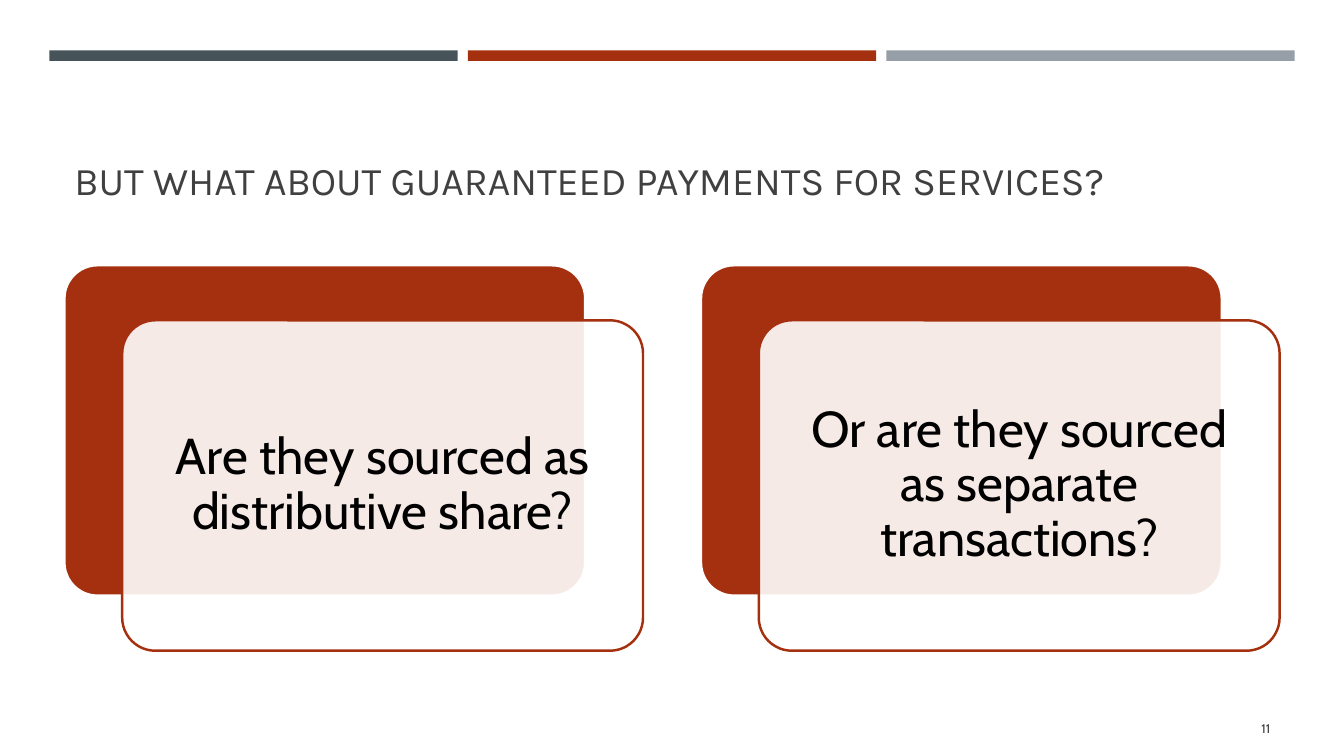
from lxml import etree
from pptx import Presentation
from pptx import util as u
from pptx.dml.color import RGBColor
from pptx.enum import shapes, text
from pptx.oxml.ns import qn

COLOURS = {
    "slate": "465359",
    "rust": "A5300F",
    "grey": "969FA7",
    "white": "FFFFFF",
    "body": "000000",
    "heading": "404040",
}
QUESTIONS = [
    "Are they sourced as distributive share?",
    "Or are they sourced as separate transactions?",
]


def colour(name):
    return RGBColor.from_string(COLOURS[name])


def add_block(slide, kind, box, fill, line=None, opacity=None):
    shape = slide.shapes.add_shape(kind, *map(u.Pt, box))
    shape.shadow.inherit = False
    shape.fill.solid()
    shape.fill.fore_color.rgb = colour(fill)
    if opacity is not None:
        colour_node = shape._element.spPr.find(qn("a:solidFill"))[0]
        etree.SubElement(colour_node, qn("a:alpha"), val=str(opacity * 1000))
    if line:
        shape.line.color.rgb = colour(line)
        shape.line.width = u.Pt(1.75)
    else:
        shape.line.fill.background()
    return shape


def add_label(slide, box, words, font, frame=None, paragraph=None):
    """Add a wrapped text box; each dict holds attributes to set."""
    label = slide.shapes.add_textbox(*map(u.Pt, box))
    text_frame = label.text_frame
    first = text_frame.paragraphs[0]
    run = first.add_run()
    run.text = words
    font = dict(font)
    run.font.color.rgb = colour(font.pop("colour"))
    targets = [
        (text_frame, {"word_wrap": True, **(frame or {})}),
        (first, paragraph or {}),
        (run.font, font),
    ]
    for target, values in targets:
        for name, value in values.items():
            setattr(target, name, value)


def add_bars(slide):
    for index, fill in enumerate(["slate", "rust", "grey"]):
        box = (35.3 + index * 298.9, 36, 291.6, 7.5)
        add_block(slide, shapes.MSO_SHAPE.RECTANGLE, box, fill)


def add_question_card(slide, left, words):
    width, height, top = 372, 236, 189.5
    offset_x, offset_y, inset = 41.3, 39.3, 7
    rounded = shapes.MSO_SHAPE.ROUNDED_RECTANGLE
    back = add_block(slide, rounded, (left, top, width, height), "rust", "white")
    front_box = (left + offset_x, top + offset_y, width, height)
    front = add_block(slide, rounded, front_box, "white", "rust", opacity=90)
    for shape in (back, front):
        shape.adjustments[0] = 0.1

    text_box = (front_box[0] + inset, front_box[1] + inset,
                width - 2 * inset, height - 2 * inset)
    sides = ("left", "right", "top", "bottom")
    frame = {f"margin_{side}": u.Pt(10.8) for side in sides}
    frame["vertical_anchor"] = text.MSO_ANCHOR.MIDDLE
    add_label(
        slide, text_box, words,
        {"name": "Cabin", "size": u.Pt(36), "colour": "body"},
        frame,
        {"alignment": text.PP_ALIGN.CENTER, "line_spacing": 0.9},
    )


def main():
    presentation = Presentation()
    presentation.slide_width = u.Pt(960)
    presentation.slide_height = u.Pt(540)
    slide = presentation.slides.add_slide(presentation.slide_layouts[6])

    # Header bars and title
    add_bars(slide)
    add_label(
        slide, (46, 55.5, 868, 93.5),
        "BUT WHAT ABOUT GUARANTEED PAYMENTS FOR SERVICES?",
        {"name": "Karla", "size": u.Pt(28), "colour": "heading"},
        {"vertical_anchor": text.MSO_ANCHOR.BOTTOM},
    )

    # Question cards
    for index, words in enumerate(QUESTIONS):
        add_question_card(slide, 46 + index * 454.7, words)

    # Slide number
    add_label(
        slide, (831.5, 506, 83, 29), "11",
        {"name": "Cabin", "size": u.Pt(9), "colour": "heading"},
        {"vertical_anchor": text.MSO_ANCHOR.MIDDLE},
        {"alignment": text.PP_ALIGN.RIGHT},
    )
    presentation.save("out.pptx")


if __name__ == "__main__":
    main()
